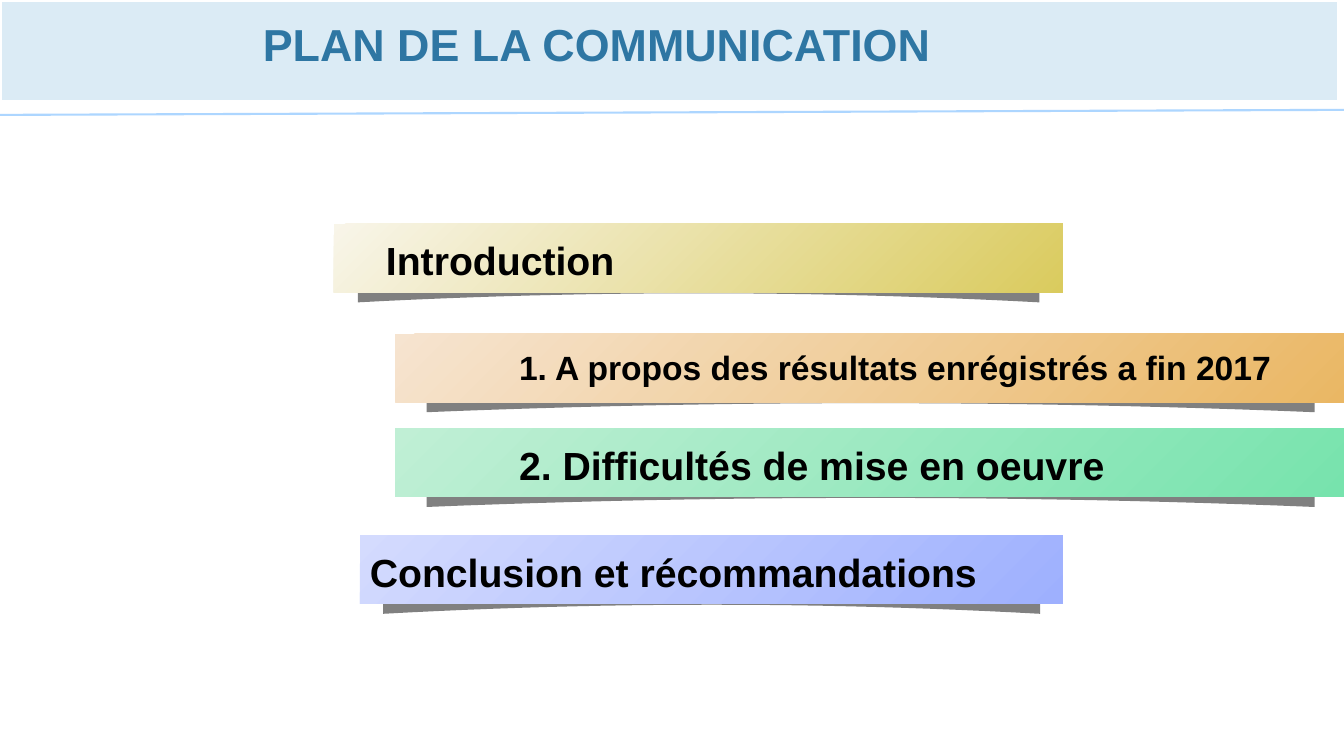
import pptx
import pptx.util
import pptx.dml.color
import pptx.enum.shapes
import pptx.enum.text
import pptx.oxml.ns
import lxml.etree

Inches = pptx.util.Inches
Pt = pptx.util.Pt
RECTANGLE = pptx.enum.shapes.MSO_SHAPE.RECTANGLE

COLORS = {
    "band": "DBEBF5",
    "band_edge": "FFFFFF",
    "rule": "ADD6FF",
    "title": "2E76A3",
    "text": "000000",
    "shadow": "808080",
    "yellow_light": "F8F5E9", "yellow_dark": "DACB5E",
    "orange_light": "F6E4D0", "orange_dark": "EAB764",
    "green_light": "C0EFD5", "green_dark": "77E3AD",
    "blue_light": "D4DBFE", "blue_dark": "9EB0FE",
}

BAR_HEIGHT = 0.68
CURVE_STEPS = 24

PLAN = [
    ("2. Difficultés de mise en oeuvre", 28, "green", (3.92, 4.25, 9.42), (5.05, 9.12)),
    ("1. A propos des résultats enrégistrés a fin 2017", 24, "orange", (3.92, 3.31, 9.42), (5.05, 12.73)),
    ("Introduction", 28, "yellow", (3.31, 2.22, 7.23), (3.73, 3.19)),
    ("Conclusion et récommandations", 28, "blue", (3.57, 5.31, 6.97), (3.57, 8.53)),
]


def color(name):
    return pptx.dml.color.RGBColor.from_string(COLORS[name])


def write_text(shapes, box, words, size, color_name, frame_format, align):
    caption = shapes.add_textbox(*map(Inches, box))
    for key, value in {"word_wrap": True, **frame_format}.items():
        setattr(caption.text_frame, key, value)
    paragraph = caption.text_frame.paragraphs[0]
    paragraph.alignment = align
    run = paragraph.add_run()
    run.text = words
    for key, value in {"name": "Arial", "size": Pt(size), "bold": True}.items():
        setattr(run.font, key, value)
    run.font.color.rgb = color(color_name)


def draw_header(slide, left, top, width):
    band = slide.shapes.add_shape(RECTANGLE, *map(Inches, (left, top, width - 0.05, 1.01)))
    band.shadow.inherit = False
    band.fill.solid()
    band.fill.fore_color.rgb = color("band")
    band.line.color.rgb = color("band_edge")
    band.line.width = Pt(2.25)

    rule = slide.shapes.add_connector(
        pptx.enum.shapes.MSO_CONNECTOR.STRAIGHT,
        *map(Inches, (left, top + 1.14, left + width, top + 1.09)))
    rule.line.color.rgb = color("rule")
    rule.line.width = Pt(1.5)
    lxml.etree.SubElement(rule._element.spPr, pptx.oxml.ns.qn("a:effectLst"))


def draw_title(slide, left, top, width, height):
    write_text(slide.shapes, (left, top, width, height), "PLAN DE LA COMMUNICATION", 32, "title",
               {"vertical_anchor": pptx.enum.text.MSO_ANCHOR.MIDDLE},
               pptx.enum.text.PP_ALIGN.CENTER)


def draw_curved_shadow(shapes, left, top, width):
    def point(x, y):
        return Inches(left + width * x), Inches(top + y)

    arc = [point(1 - step / CURVE_STEPS, 0.24 + 0.09 * (1 - 2 * step / CURVE_STEPS) ** 2)
           for step in range(CURVE_STEPS + 1)]
    outline = shapes.build_freeform(*arc[0])
    outline.add_line_segments(arc[1:] + [point(0, 0.08), point(0.5, 0), point(1, 0.08)], close=True)
    shadow = outline.convert_to_shape()
    shadow.shadow.inherit = False
    shadow.fill.solid()
    shadow.fill.fore_color.rgb = color("shadow")
    shadow.line.fill.background()


def draw_plan_bar(slide, left, top, width, words, size, hue, text_left, text_width):
    shapes = slide.shapes.add_group_shape().shapes
    draw_curved_shadow(shapes, left + width * 0.033, top + 0.45, width * 0.935)

    bar = shapes.add_shape(RECTANGLE, *map(Inches, (left, top, width, BAR_HEIGHT)))
    bar.shadow.inherit = False
    bar.line.fill.background()
    bar.fill.gradient()
    bar.fill.gradient_angle = 315
    for stop, shade in zip(bar.fill.gradient_stops, ("light", "dark")):
        stop.color.rgb = color(f"{hue}_{shade}")

    write_text(shapes, (text_left, top + 0.08, text_width, size / 50), words, size, "text",
               {"auto_size": pptx.enum.text.MSO_AUTO_SIZE.SHAPE_TO_FIT_TEXT},
               pptx.enum.text.PP_ALIGN.LEFT)


def main():
    deck = pptx.Presentation()
    deck.slide_width = Inches(13.33)
    deck.slide_height = Inches(7.5)
    slide = deck.slides.add_slide(deck.slide_layouts[6])
    draw_header(slide, 0, 0, 13.33)
    for words, size, hue, bar_box, text_span in PLAN:
        draw_plan_bar(slide, *bar_box, words, size, hue, *text_span)
    draw_title(slide, 2.14, 0.01, 7.56, 0.84)
    deck.save("out.pptx")


if __name__ == "__main__":
    main()
